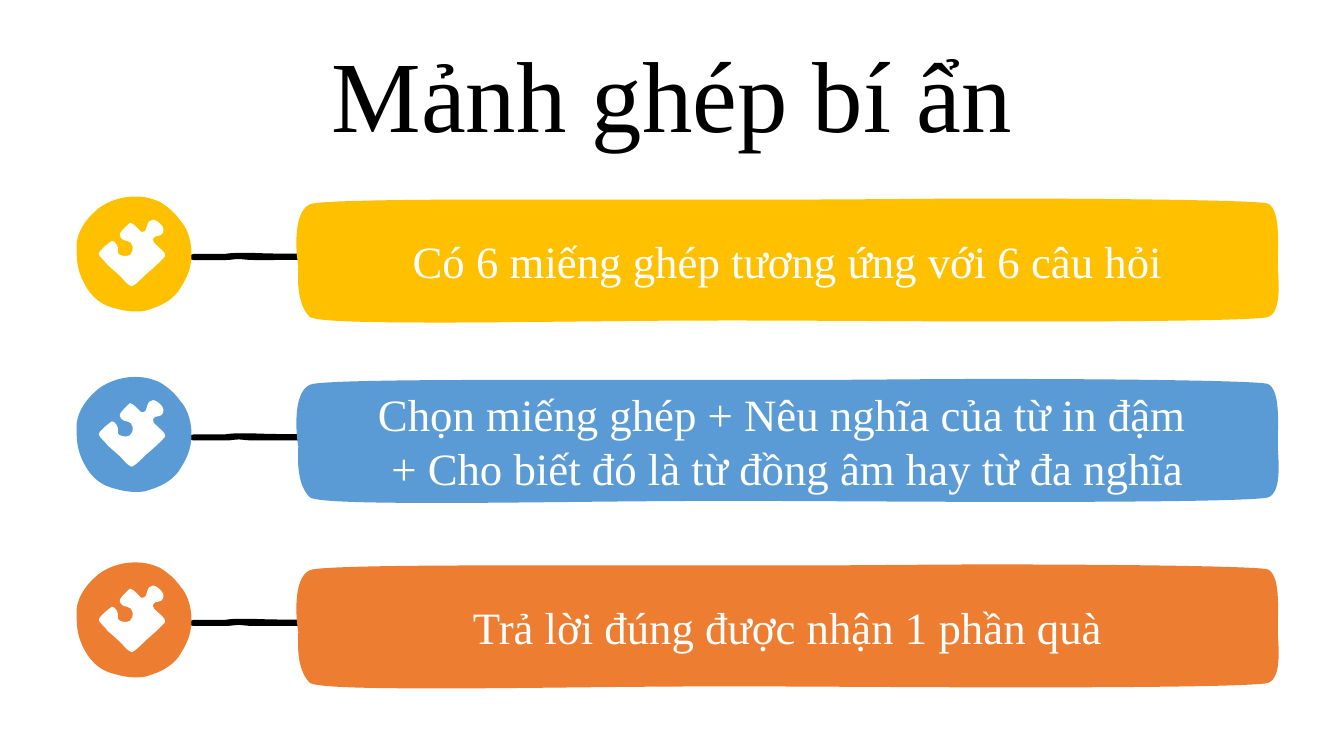
"""Builds the rules slide of a puzzle game: a title and three hand-drawn rows."""
import dataclasses
import typing

import pptx
import pptx.dml.color
import pptx.enum.text
import pptx.oxml.ns
import pptx.util

Curve = tuple[float, float, float, float, float, float]
CM_PER_INCH = 2.54


@dataclasses.dataclass(frozen=True)
class Theme:
    """Colours, font and type sizes of the slide."""
    black: str = "000000"
    white: str = "FFFFFF"
    yellow: str = "FFC000"
    blue: str = "5B9BD5"
    orange: str = "ED7D31"
    font: str = "Times New Roman"
    title_size: int = 72
    row_size: int = 32


class Outline(typing.NamedTuple):
    """A closed outline of Bézier curves, in inches, placed for the first row."""
    start: tuple[float, float]
    curves: tuple[Curve, ...]


class Row(typing.NamedTuple):
    """One rule of the game with its colour and its distance below the first row."""
    drop: float
    colour: str
    lines: tuple[str, ...]


THEME = Theme()

LINK = Outline((1.87, 2.55), (
    (1.87, 2.57, 1.9, 2.58, 1.92, 2.58),
    (2.05, 2.58, 2.15, 2.58, 2.24, 2.58),
    (2.29, 2.58, 2.33, 2.57, 2.37, 2.57),
    (2.39, 2.57, 2.45, 2.58, 2.52, 2.58),
    (2.75, 2.58, 3.15, 2.58, 3.31, 2.57),
    (3.34, 2.57, 3.36, 2.56, 3.36, 2.54),
    (3.36, 2.52, 3.33, 2.51, 3.3, 2.51),
    (3.15, 2.52, 2.74, 2.52, 2.52, 2.51),
    (2.45, 2.51, 2.39, 2.51, 2.37, 2.51),
    (2.33, 2.51, 2.29, 2.51, 2.23, 2.52),
    (2.15, 2.52, 2.05, 2.52, 1.92, 2.52),
    (1.9, 2.52, 1.87, 2.54, 1.87, 2.55),
))
BAND = Outline((9.83, 1.97), (
    (9.19, 1.97, 8.53, 1.98, 7.94, 1.98),
    (7.71, 1.98, 7.46, 1.98, 7.18, 1.98),
    (6.48, 1.98, 5.66, 1.98, 4.94, 1.98),
    (4.03, 1.98, 3.27, 1.99, 3.1, 2.02),
    (2.91, 2.06, 2.93, 2.47, 2.96, 2.64),
    (2.96, 2.7, 2.93, 3, 3.07, 3.14),
    (3.11, 3.19, 3.63, 3.2, 4.38, 3.2),
    (5.17, 3.2, 6.21, 3.18, 7.19, 3.18),
    (7.24, 3.18, 7.29, 3.18, 7.34, 3.18),
    (7.99, 3.18, 9.11, 3.19, 10.15, 3.19),
    (11.29, 3.19, 12.32, 3.18, 12.56, 3.15),
    (12.71, 3.13, 12.69, 2.84, 12.68, 2.68),
    (12.67, 2.48, 12.72, 2.09, 12.58, 2.02),
    (12.5, 1.99, 11.23, 1.97, 9.83, 1.97),
))
DISC = Outline((1.33, 1.95), (
    (1.19, 1.95, 1.03, 2.01, 0.94, 2.1),
    (0.85, 2.18, 0.75, 2.32, 0.76, 2.46),
    (0.76, 2.61, 0.77, 2.71, 0.87, 2.87),
    (0.96, 3, 1.05, 3.03, 1.11, 3.05),
    (1.15, 3.06, 1.24, 3.09, 1.34, 3.09),
    (1.38, 3.09, 1.42, 3.09, 1.45, 3.08),
    (1.59, 3.04, 1.69, 2.99, 1.77, 2.89),
    (1.84, 2.78, 1.9, 2.68, 1.9, 2.52),
    (1.9, 2.36, 1.84, 2.24, 1.79, 2.19),
    (1.75, 2.13, 1.67, 2.05, 1.58, 2),
    (1.48, 1.96, 1.43, 1.95, 1.33, 1.95),
))
PUZZLE_PIECE = Outline((1.52, 2.18), (
    (1.49, 2.18, 1.47, 2.2, 1.46, 2.24),
    (1.46, 2.27, 1.44, 2.3, 1.42, 2.3),
    (1.41, 2.3, 1.41, 2.3, 1.4, 2.3),
    (1.38, 2.28, 1.32, 2.21, 1.29, 2.21),
    (1.28, 2.22, 1.2, 2.29, 1.19, 2.32),
    (1.18, 2.34, 1.21, 2.39, 1.26, 2.39),
    (1.32, 2.39, 1.34, 2.49, 1.29, 2.53),
    (1.27, 2.54, 1.25, 2.54, 1.24, 2.54),
    (1.2, 2.54, 1.16, 2.52, 1.17, 2.49),
    (1.18, 2.44, 1.14, 2.39, 1.11, 2.39),
    (1.08, 2.41, 0.98, 2.49, 0.98, 2.52),
    (0.98, 2.54, 1.05, 2.6, 1.07, 2.63),
    (1.09, 2.65, 1.19, 2.73, 1.23, 2.78),
    (1.26, 2.82, 1.3, 2.84, 1.31, 2.84),
    (1.34, 2.83, 1.41, 2.76, 1.45, 2.72),
    (1.5, 2.68, 1.62, 2.57, 1.64, 2.54),
    (1.65, 2.51, 1.57, 2.45, 1.53, 2.41),
    (1.5, 2.37, 1.53, 2.34, 1.57, 2.34),
    (1.61, 2.34, 1.65, 2.29, 1.6, 2.23),
    (1.57, 2.2, 1.54, 2.18, 1.52, 2.18),
))
ROWS = (
    Row(0, THEME.yellow, ("Có 6 miếng ghép tương ứng với 6 câu hỏi",)),
    Row(1.79, THEME.blue, ("Chọn miếng ghép + Nêu nghĩa của từ in đậm ",
                           "+ Cho biết đó là từ đồng âm hay từ đa nghĩa")),
    Row(3.63, THEME.orange, ("Trả lời đúng được nhận 1 phần quà",)),
)


def place(x: float, y: float, drop: float) -> tuple[int, int]:
    """Return a point in slide units, moved down by drop."""
    return pptx.util.Cm(x * CM_PER_INCH), pptx.util.Cm((y + drop) * CM_PER_INCH)


def bend_segments(shape: typing.Any) -> None:
    """Turn each three line segments of a freeform into one Bézier curve."""
    segments = list(shape.element.iter(pptx.oxml.ns.qn("a:lnTo")))
    for first in range(0, len(segments), 3):
        curve = segments[first].makeelement(pptx.oxml.ns.qn("a:cubicBezTo"))
        segments[first].addprevious(curve)
        for segment in segments[first:first + 3]:
            curve.append(segment[0])
            segment.getparent().remove(segment)


def draw_outline(slide: typing.Any, outline: Outline, drop: float, colour: str) -> typing.Any:
    """Draw a filled outline without a border and return its shape."""
    builder = slide.shapes.build_freeform(*place(*outline.start, drop))
    builder.add_line_segments([place(curve[i], curve[i + 1], drop)
                               for curve in outline.curves for i in (0, 2, 4)], close=True)
    shape = builder.convert_to_shape()
    bend_segments(shape)
    shape.shadow.inherit = False
    shape.fill.solid()
    shape.fill.fore_color.rgb = pptx.dml.color.RGBColor.from_string(colour)
    shape.line.fill.background()
    return shape


def write_text(shape: typing.Any, lines: tuple[str, ...], *, size: int, colour: str,
               anchor: typing.Any, line_spacing: float | None = None) -> None:
    """Write centred paragraphs into a shape."""
    frame = shape.text_frame
    frame.word_wrap = True
    frame.vertical_anchor = anchor
    for index, line in enumerate(lines):
        paragraph = frame.add_paragraph() if index else frame.paragraphs[0]
        paragraph.alignment = pptx.enum.text.PP_ALIGN.CENTER
        paragraph.line_spacing = line_spacing
        run = paragraph.add_run()
        run.text = line
        run.font.name = THEME.font
        run.font.size = pptx.util.Pt(size)
        run.font.color.rgb = pptx.dml.color.RGBColor.from_string(colour)


def draw_row(slide: typing.Any, row: Row) -> None:
    """Draw one rule: link, text band, disc and puzzle piece."""
    draw_outline(slide, LINK, row.drop, THEME.black)
    band = draw_outline(slide, BAND, row.drop, row.colour)
    frame = band.text_frame
    frame.margin_left = frame.margin_right = pptx.util.Cm(0.25)
    frame.margin_top = frame.margin_bottom = pptx.util.Cm(0.25)
    write_text(band, row.lines, size=THEME.row_size, colour=THEME.white,
               anchor=pptx.enum.text.MSO_ANCHOR.MIDDLE)
    draw_outline(slide, DISC, row.drop, row.colour)
    draw_outline(slide, PUZZLE_PIECE, row.drop, THEME.white)


def main() -> None:
    """Build and save the presentation."""
    presentation = pptx.Presentation()
    presentation.slide_width = pptx.util.Cm(33.87)
    presentation.slide_height = pptx.util.Cm(19.05)
    slide = presentation.slides.add_slide(presentation.slide_layouts[6])
    for row in ROWS:
        draw_row(slide, row)
    title = slide.shapes.add_textbox(pptx.util.Cm(1.98), pptx.util.Cm(-0.23),
                                     pptx.util.Cm(29.9), pptx.util.Cm(4.27))
    write_text(title, ("Mảnh ghép bí ẩn",), size=THEME.title_size, colour=THEME.black,
               anchor=pptx.enum.text.MSO_ANCHOR.TOP, line_spacing=1.3)
    title.text_frame.auto_size = pptx.enum.text.MSO_AUTO_SIZE.SHAPE_TO_FIT_TEXT
    presentation.save("out.pptx")


if __name__ == "__main__":
    main()
